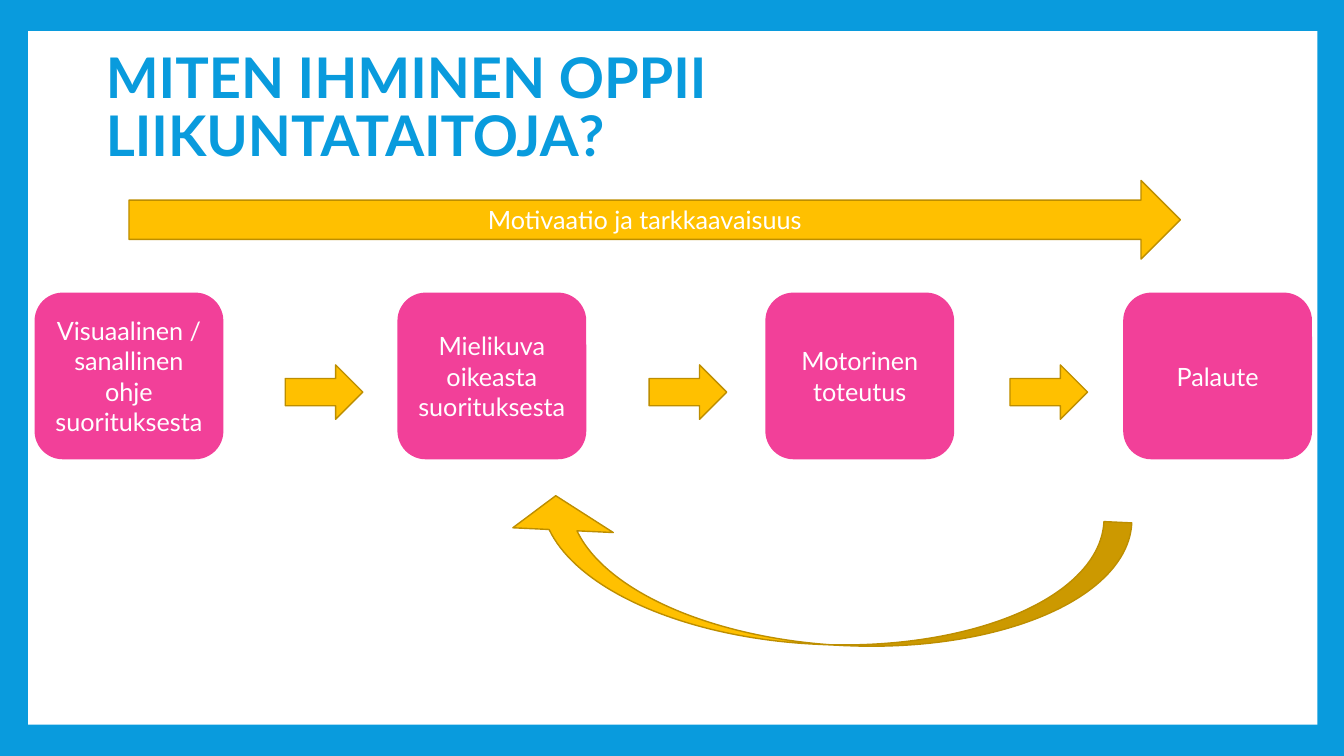
from dataclasses import dataclass

from pptx import Presentation
from pptx.dml.color import RGBColor
from pptx.enum.shapes import MSO_SHAPE as Shape
from pptx.enum.text import MSO_ANCHOR as Anchor, MSO_AUTO_SIZE as AutoSize, PP_ALIGN as Align
from pptx.shapes.autoshape import Shape as AutoShape
from pptx.slide import Slide
from pptx.text.text import TextFrame
from pptx.util import Pt

PX = 9144  # EMU per px, 100 px to the inch
FONT = "Lato"
BLUE, WHITE = "099BDD", "FFFFFF"
PINK, GOLD, DARK_GOLD = "F24099", "FFC000", "BD8E00"


@dataclass(frozen=True)
class Box:
    left: int
    top: int
    width: int
    height: int

    def emu(self) -> tuple[int, int, int, int]:
        return self.left * PX, self.top * PX, self.width * PX, self.height * PX


@dataclass(frozen=True)
class Step:
    left: int
    label: str


STEPS = [
    Step(35, "Visuaalinen / sanallinen ohje suorituksesta"),
    Step(395, "Mielikuva oikeasta suorituksesta"),
    Step(760, "Motorinen toteutus"),
    Step(1115, "Palaute"),
]
STEP_ARROW_LEFTS = [283, 644, 1002]


def rgb(value: str) -> RGBColor:
    return RGBColor.from_string(value)


def write(frame: TextFrame, text: str, size: int, color: str,
          align: Align, bold: bool = False) -> None:
    frame.word_wrap = True
    frame.vertical_anchor = Anchor.MIDDLE
    paragraph = frame.paragraphs[0]
    paragraph.alignment = align
    run = paragraph.add_run()
    run.text = text
    run.font.name = FONT
    run.font.size = Pt(size)
    run.font.bold = bold
    run.font.color.rgb = rgb(color)


def draw(slide: Slide, kind: Shape, box: Box, fill: str,
         line: str | None = None, label: str = "") -> AutoShape:
    shape = slide.shapes.add_shape(kind, *box.emu())
    shape.shadow.inherit = False
    shape.fill.solid()
    shape.fill.fore_color.rgb = rgb(fill)
    if line:
        shape.line.color.rgb = rgb(line)
        shape.line.width = Pt(1)
    else:
        shape.line.fill.background()
    if label:
        write(shape.text_frame, label, 18, WHITE, Align.CENTER)
    return shape


def set_title(slide: Slide, text: str) -> None:
    title = slide.shapes.title
    title.left, title.top, title.width, title.height = Box(95, 27, 1070, 165).emu()
    title.text_frame.auto_size = AutoSize.NONE
    write(title.text_frame, text, 40, BLUE, Align.LEFT, bold=True)
    title.text_frame.paragraphs[0].line_spacing = 0.85
    # Bring the title in front of the white panel
    slide.shapes._spTree.append(title._element)


def main() -> None:
    deck = Presentation()
    deck.slide_width, deck.slide_height = 12192000, 6858000
    slide = deck.slides.add_slide(deck.slide_layouts.get_by_name("Title Only"))
    slide.background.fill.solid()
    slide.background.fill.fore_color.rgb = rgb(BLUE)

    draw(slide, Shape.RECTANGLE, Box(28, 31, 1279, 688), WHITE)
    set_title(slide, "MITEN IHMINEN OPPII LIIKUNTATAITOJA?")

    for step in STEPS:
        draw(slide, Shape.ROUNDED_RECTANGLE, Box(step.left, 291, 186, 164),
             PINK, PINK, step.label)
    for left in STEP_ARROW_LEFTS:
        draw(slide, Shape.RIGHT_ARROW, Box(left, 362, 77, 54), GOLD, DARK_GOLD)

    feedback_arrow = draw(slide, Shape.CURVED_DOWN_ARROW, Box(498, 504, 622, 135),
                          GOLD, DARK_GOLD)
    feedback_arrow.rotation = 182.7
    for index, value in enumerate((0.205, 0.739, 0.25)):
        feedback_arrow.adjustments[index] = value

    draw(slide, Shape.RIGHT_ARROW, Box(128, 179, 1043, 78), GOLD, DARK_GOLD,
         "Motivaatio ja tarkkaavaisuus")
    deck.save("out.pptx")


if __name__ == "__main__":
    main()
